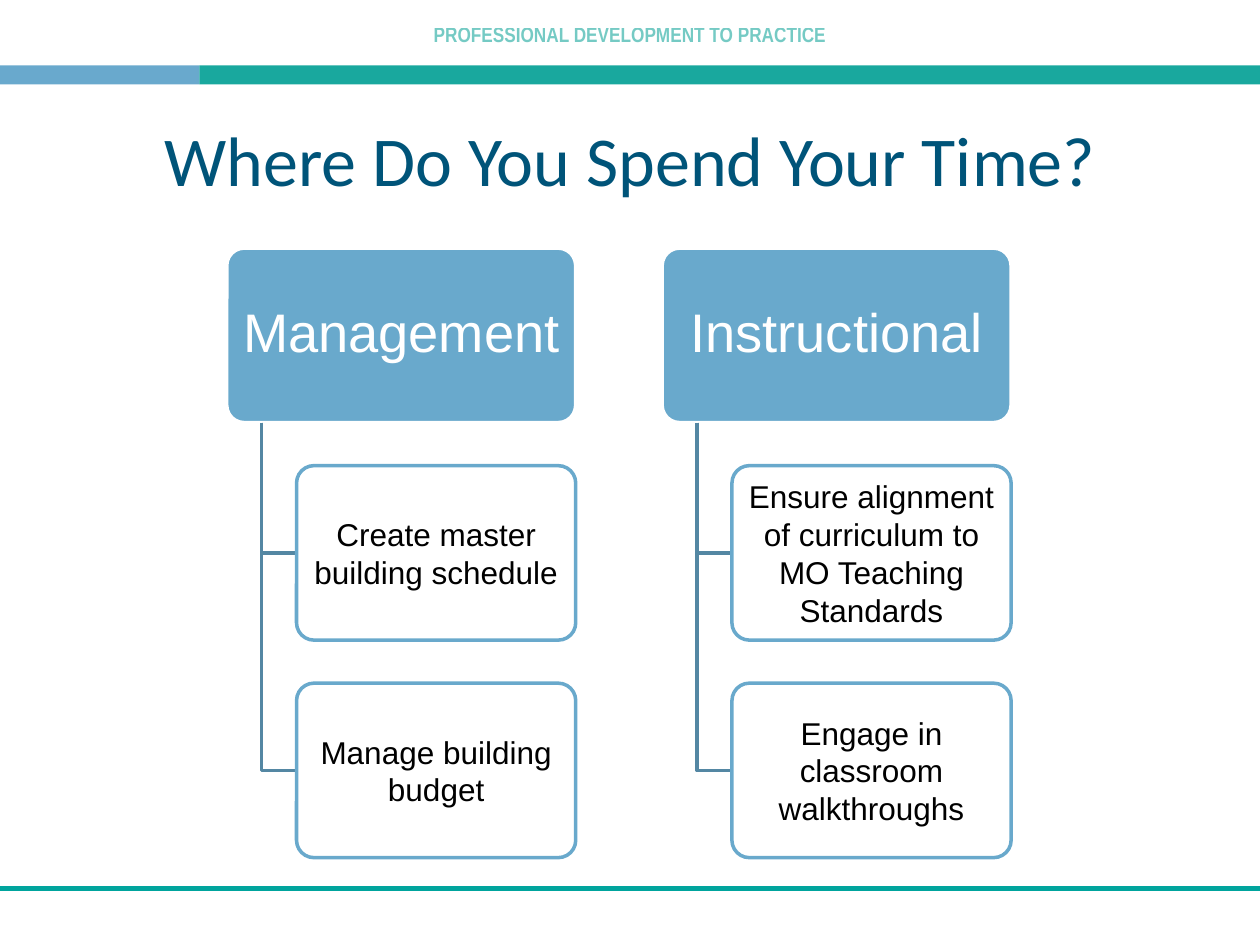
from lxml import etree
from pptx import Presentation
from pptx.dml.color import RGBColor
from pptx.enum import shapes, text
from pptx.oxml import ns
from pptx.util import Pt

TEAL = RGBColor(0x19, 0xA8, 0x9E)
RULE_TEAL = RGBColor(0x00, 0xA4, 0x9D)
BAND_BLUE = RGBColor(0x69, 0xA9, 0xCD)
BOX_BLUE = RGBColor(0x69, 0xA9, 0xCC)
BRANCH_BLUE = RGBColor(0x54, 0x87, 0xA3)
NAVY = RGBColor(0x00, 0x54, 0x79)
WHITE = RGBColor(0xFF, 0xFF, 0xFF)
BLACK = RGBColor(0x00, 0x00, 0x00)

SLIDE_W, SLIDE_H = 720, 540
TREE_LEFT, TREE_TOP = 129.6, 141.8
TREE_PITCH, ROW_PITCH = 248.8, 124.3
HEAD_W, BOX_H = 199.4, 99.7
TRUNK_INDENT, CHILD_INDENT = 0.1 * HEAD_W, 0.2 * HEAD_W

TREES = [
    ("Management", ["Create master building schedule", "Manage building budget"]),
    ("Instructional", ["Ensure alignment of curriculum to MO Teaching Standards",
                       "Engage in classroom walkthroughs"]),
]


def set_alpha(fill_parent, percent):
    color = fill_parent.find(".//" + ns.qn("a:srgbClr"))
    etree.SubElement(color, ns.qn("a:alpha")).set("val", str(percent * 1000))


def write(frame, wording, font_name, size, color, inset, bold=False):
    frame.word_wrap = True
    frame.vertical_anchor = text.MSO_ANCHOR.MIDDLE
    frame.margin_left = frame.margin_right = Pt(inset)
    frame.margin_top = frame.margin_bottom = Pt(inset * 0.6)
    paragraph = frame.paragraphs[0]
    paragraph.alignment = text.PP_ALIGN.CENTER
    run = paragraph.add_run()
    run.text = wording
    run.font.name = font_name
    run.font.size = Pt(size)
    run.font.bold = bold
    run.font.color.rgb = color
    return run


def add_band(slide, left, width, color):
    band = slide.shapes.add_shape(shapes.MSO_SHAPE.RECTANGLE,
                                  Pt(left), Pt(37.4), Pt(width), Pt(10.8))
    band.shadow.inherit = False
    band.fill.solid()
    band.fill.fore_color.rgb = color
    band.line.fill.background()


def add_header(slide):
    banner = slide.shapes.add_textbox(Pt(0), Pt(9.4), Pt(SLIDE_W), Pt(28.8))
    run = write(banner.text_frame, "PROFESSIONAL DEVELOPMENT TO PRACTICE",
                "Arial Narrow", 12, TEAL, 5, bold=True)
    banner.text_frame.vertical_anchor = text.MSO_ANCHOR.TOP
    set_alpha(run.font._element, 60)
    split = 114
    add_band(slide, 0, split, BAND_BLUE)
    add_band(slide, split, SLIDE_W - split, TEAL)


def add_footer_rule(slide):
    rule = slide.shapes.add_connector(shapes.MSO_CONNECTOR.STRAIGHT,
                                      Pt(0), Pt(507.6), Pt(SLIDE_W), Pt(507.6))
    rule.line.color.rgb = RULE_TEAL
    rule.line.width = Pt(3)
    etree.SubElement(rule._element.spPr, ns.qn("a:effectLst"))


def add_title(slide):
    title = slide.shapes.title
    title.left, title.top, title.width, title.height = Pt(36), Pt(47.5), Pt(648), Pt(86.4)
    write(title.text_frame, "Where Do You Spend Your Time?", "Calibri", 40, NAVY, 7.2)


def add_box(slide, left, top, width, fill, outline):
    box = slide.shapes.add_shape(shapes.MSO_SHAPE.ROUNDED_RECTANGLE,
                                 Pt(left), Pt(top), Pt(width), Pt(BOX_H))
    box.adjustments[0] = 0.1
    box.shadow.inherit = False
    box.fill.solid()
    box.fill.fore_color.rgb = fill
    box.line.color.rgb = outline
    box.line.width = Pt(2)
    return box


def add_branch(slide, left, top, bottom):
    trunk, child = Pt(left + TRUNK_INDENT), Pt(left + CHILD_INDENT)
    builder = slide.shapes.build_freeform(trunk, Pt(top))
    builder.add_line_segments([(trunk, Pt(bottom)), (child, Pt(bottom))], close=False)
    branch = builder.convert_to_shape()
    branch.shadow.inherit = False
    branch.fill.background()
    branch.line.color.rgb = BRANCH_BLUE
    branch.line.width = Pt(2)


def add_tree(slide, left, heading, tasks):
    head = add_box(slide, left, TREE_TOP, HEAD_W, BOX_BLUE, WHITE)
    write(head.text_frame, heading, "Arial", 31, WHITE, 4.2)
    head.text_frame.paragraphs[0].line_spacing = 0.9
    for row, task in enumerate(tasks, 1):
        top = TREE_TOP + row * ROW_PITCH
        add_branch(slide, left, TREE_TOP + BOX_H, top + BOX_H / 2)
        child = add_box(slide, left + CHILD_INDENT, top, HEAD_W - CHILD_INDENT, WHITE, BOX_BLUE)
        set_alpha(child._element.spPr.find(ns.qn("a:solidFill")), 90)
        write(child.text_frame, task, "Arial", 18, BLACK, 2.8)


def main():
    deck = Presentation()
    deck.slide_width, deck.slide_height = Pt(SLIDE_W), Pt(SLIDE_H)
    slide = deck.slides.add_slide(deck.slide_layouts[5])
    add_header(slide)
    add_footer_rule(slide)
    add_title(slide)
    for column, (heading, tasks) in enumerate(TREES):
        add_tree(slide, TREE_LEFT + column * TREE_PITCH, heading, tasks)
    deck.save("out.pptx")


if __name__ == "__main__":
    main()
